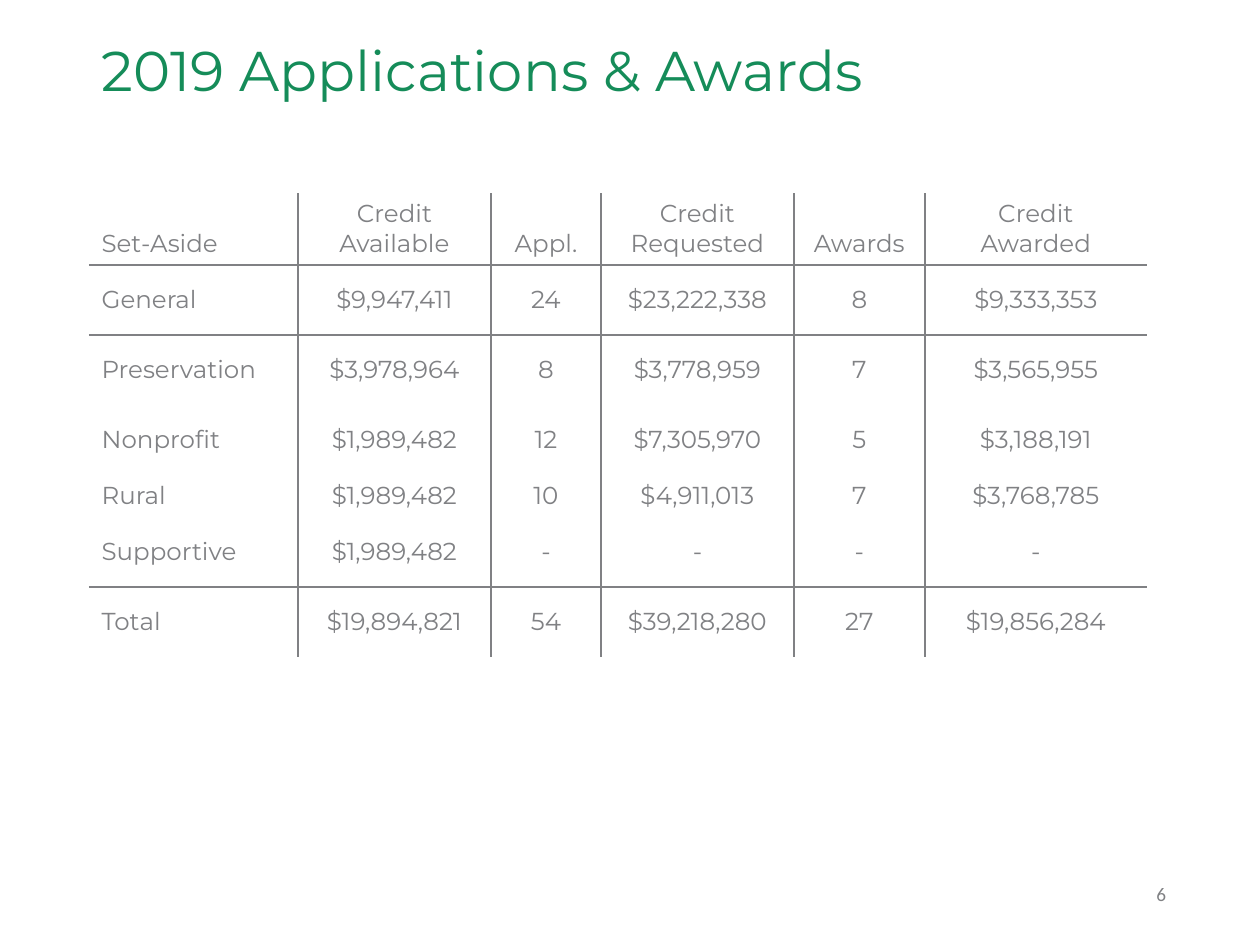
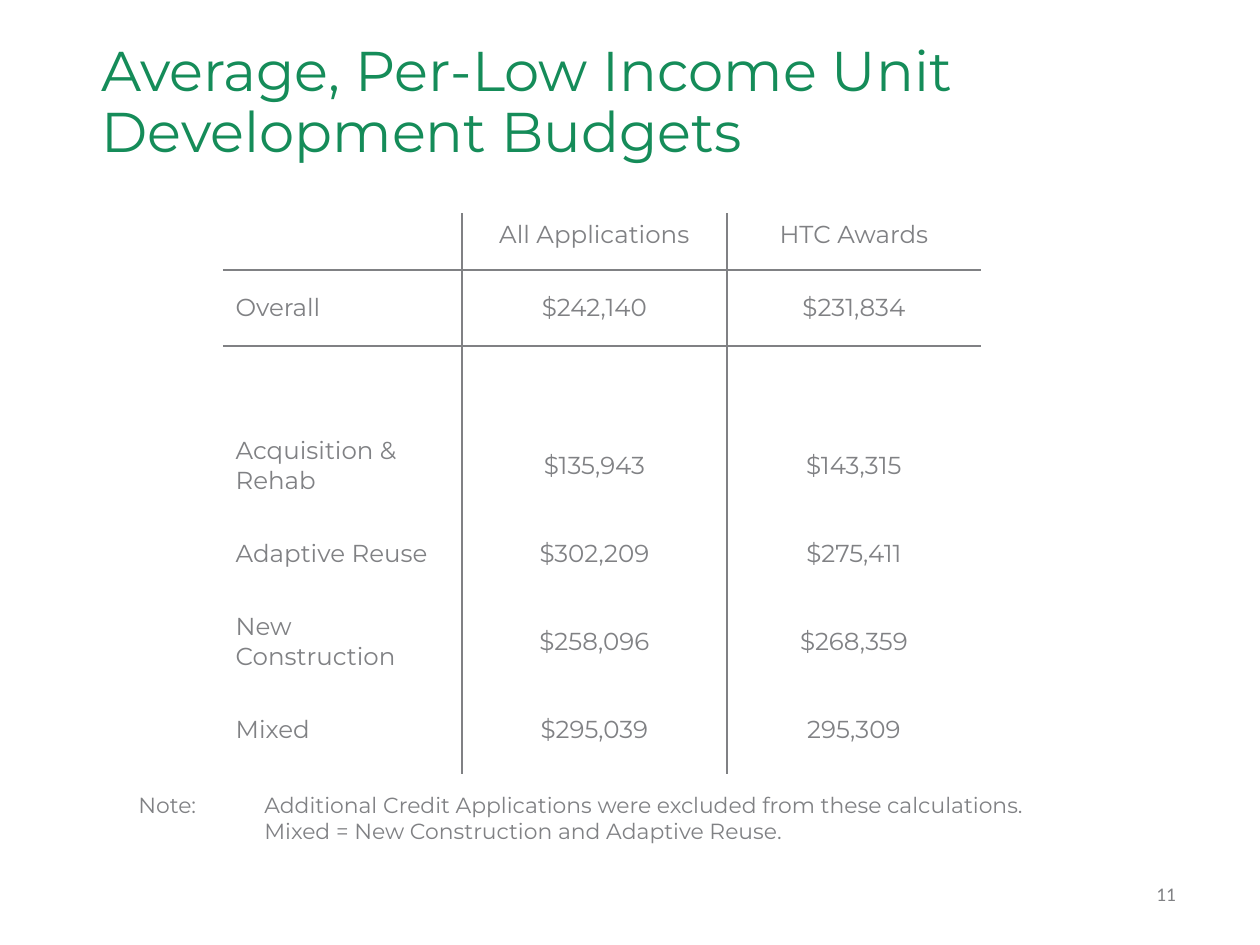
import lxml.etree
import pptx
import pptx.dml.color
import pptx.enum.text
import pptx.oxml.ns
import pptx.util

HUES = {"title": "158C59", "text": "808184"}
FACE = "Montserrat"
PLAIN = "{2D5ABB26-0587-4C30-8999-92F81FD0307C}"
ALIGN = pptx.enum.text.PP_ALIGN
ANCHOR = pptx.enum.text.MSO_ANCHOR

AWARDS = [
    ("Set-Aside", "Credit\nAvailable", "Appl.", "Credit\nRequested", "Awards", "Credit\nAwarded"),
    ("General", "$9,947,411", "24", "$23,222,338", "8", "$9,333,353"),
    ("Preservation", "$3,978,964", "8", "$3,778,959", "7", "$3,565,955"),
    ("Nonprofit", "$1,989,482", "12", "$7,305,970", "5", "$3,188,191"),
    ("Rural", "$1,989,482", "10", "$4,911,013", "7", "$3,768,785"),
    ("Supportive", "$1,989,482", "-", "-", "-", "-"),
    ("Total", "$19,894,821", "54", "$39,218,280", "27", "$19,856,284"),
]
COSTS = [
    ("", "All Applications", "HTC Awards"),
    ("Overall", "$242,140", "$231,834"),
    ("", "", ""),
    ("Acquisition & Rehab", "$135,943", "$143,315"),
    ("Adaptive Reuse", "$302,209", "$275,411"),
    ("New Construction", "$258,096", "$268,359"),
    ("Mixed", "$295,039", "295,309"),
]
NOTE = ("Note:\tAdditional Credit Applications were excluded from these calculations.\n"
        "Mixed = New Construction and Adaptive Reuse.")


def px(count):
    return pptx.util.Emu(round(count * 914400 / 126))


def write(frame, text, size=14, face=FACE, hue="text", align=ALIGN.LEFT, lead=None):
    for spot, line in enumerate(text.split("\n")):
        para = frame.paragraphs[0] if spot == 0 else frame.add_paragraph()
        para.alignment = align
        if lead:
            para.line_spacing = lead
        if line:
            run = para.add_run()
            run.text = line
            run.font.size = pptx.util.Pt(size)
            run.font.name = face
            run.font.color.rgb = pptx.dml.color.RGBColor.from_string(HUES[hue])


def add_text(slide, text, box, wrap=True, **style):
    frame = slide.shapes.add_textbox(*map(px, box)).text_frame
    frame.word_wrap = wrap
    write(frame, text, **style)
    return frame


def add_slide(deck, title, page):
    slide = deck.slides.add_slide(deck.slide_layouts[0])
    under = slide.placeholders[1].element
    under.getparent().remove(under)
    head = slide.shapes.title
    head.left, head.top, head.width, head.height = map(px, (89, 37, 1057, 140))
    frame = head.text_frame
    frame.word_wrap = True
    frame.auto_size = pptx.enum.text.MSO_AUTO_SIZE.NONE
    frame.vertical_anchor = ANCHOR.TOP
    write(frame, title, size=32, hue="title", lead=0.9)
    add_text(slide, page, (1144, 876, 48, 36), wrap=False, size=11, face="Calibri")
    return slide


def rule(cell, side):
    line = lxml.etree.SubElement(cell._tc.get_or_add_tcPr(), pptx.oxml.ns.qn("a:ln" + side), w="12700")
    fill = lxml.etree.SubElement(line, pptx.oxml.ns.qn("a:solidFill"))
    lxml.etree.SubElement(fill, pptx.oxml.ns.qn("a:srgbClr"), val=HUES["text"])


def add_grid(slide, data, left, top, wide, high, cuts, bars, head):
    box = map(px, (left, top, sum(wide), sum(high)))
    frame = slide.shapes.add_table(len(high), len(wide), *box)
    grid = frame.table
    grid.first_row = grid.horz_banding = False
    grid._tbl.tblPr.find(pptx.oxml.ns.qn("a:tableStyleId")).text = PLAIN
    for col, width in zip(grid.columns, wide):
        col.width = px(width)
    for row, height in zip(grid.rows, high):
        row.height = px(height)
    for y, line in enumerate(data):
        for x, text in enumerate(line):
            cell = grid.cell(y, x)
            edges = {"L": x - 1 in cuts, "R": x in cuts, "T": y - 1 in bars, "B": y in bars}
            for side, drawn in edges.items():
                if drawn:
                    rule(cell, side)
            cell.fill.background()
            cell.vertical_anchor = ANCHOR.MIDDLE if y else head
            write(cell.text_frame, text, align=ALIGN.CENTER if x else ALIGN.LEFT)


def add_note(slide, text):
    frame = add_text(slide, text, (126, 785, 1048, 66), size=12.5)
    for para, dent in zip(frame.paragraphs, (-126, 0)):
        prop = para._p.get_or_add_pPr()
        prop.set("marL", str(px(126)))
        prop.set("indent", str(px(dent)))


def main():
    deck = pptx.Presentation()
    deck.slide_width, deck.slide_height = px(1260), px(945)

    slide = add_slide(deck, "2019 Applications & Awards", "6")
    add_grid(slide, AWARDS, 89, 193, (209, 193, 110, 193, 131, 222),
             (72, 70, 70, 70, 42, 70, 70), cuts=(0, 1, 3), bars=(0, 5), head=ANCHOR.BOTTOM)

    slide = add_slide(deck, "Average, Per-Low Income Unit Development Budgets", "11")
    add_grid(slide, COSTS, 223, 213, (239, 265, 254),
             (57, 76, 76, 88, 88, 88, 88), cuts=(0, 1), bars=(0,), head=ANCHOR.TOP)
    add_note(slide, NOTE)

    deck.save("out.pptx")


if __name__ == "__main__":
    main()
